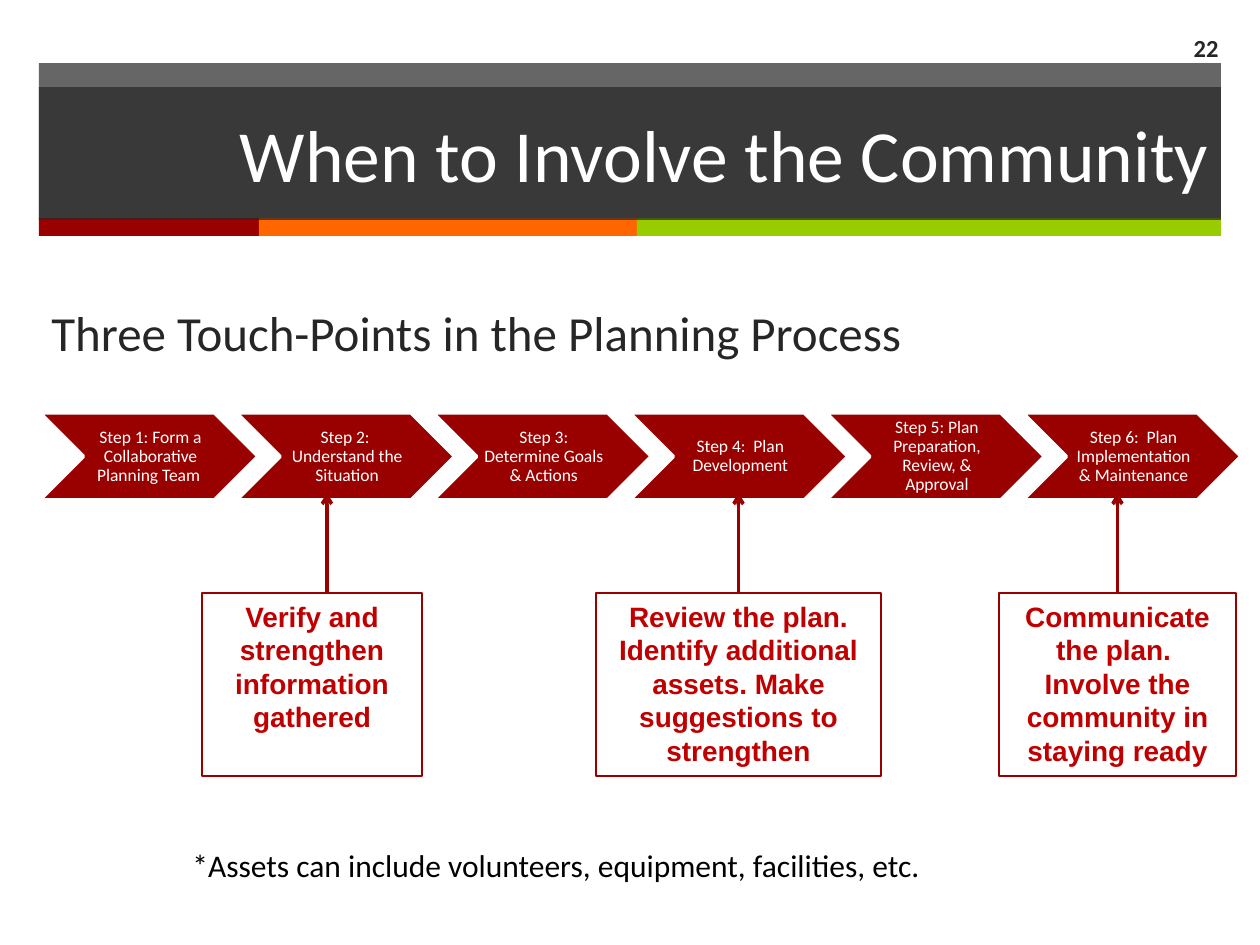
from lxml.etree import SubElement
from pptx import Presentation
from pptx.dml.color import RGBColor
from pptx.enum.shapes import MSO_CONNECTOR, MSO_SHAPE
from pptx.enum.text import MSO_ANCHOR, PP_ALIGN
from pptx.oxml.ns import qn
from pptx.util import Emu, Pt

PX_PER_INCH = 126
WHITE = RGBColor(0xFF, 0xFF, 0xFF)
BLACK = RGBColor(0, 0, 0)
CHARCOAL = RGBColor(0x26, 0x26, 0x26)
DARK_RED = RGBColor(0x99, 0x00, 0x00)
TEXT_RED = RGBColor(0xC0, 0x00, 0x00)
ORANGE = RGBColor(0xFF, 0x66, 0x00)
GREEN = RGBColor(0x99, 0xCC, 0x00)

TITLE = "When to Involve the Community"
SUBTITLE = "Three Touch-Points in the Planning Process"
FOOTNOTE = "*Assets can include volunteers, equipment, facilities, etc."
PAGE_NUMBER = "22"
STRIPES = [(220, DARK_RED), (378, ORANGE), (584, GREEN)]  # width, colour
STEPS = [
    "Step 1: Form a Collaborative Planning Team ",
    "Step 2:  Understand the Situation",
    "Step 3: Determine Goals & Actions",
    "Step 4:  Plan Development",
    "Step 5: Plan Preparation, Review, & Approval",
    "Step 6:  Plan Implementation & Maintenance",
]
# text, box left, box width, arrow x, whether the arrow starts at the box's centre
TOUCH_POINTS = [
    ("Verify and strengthen information gathered", 202, 220, 327, False),
    ("Review the plan. Identify additional assets. Make suggestions to strengthen",
     596, 285, 738, True),
    ("Communicate the plan.  Involve the community in staying ready",
     999, 237, 1118, True),
]

BAND_LEFT, BAND_WIDTH = 39, 1182
STEP_LEFT, STEP_TOP, STEP_WIDTH, STEP_HEIGHT = 40, 413, 218, 87
STEP_PITCH = 983 / 5
LABEL_INSET, LABEL_WIDTH = 43, 131
NOTE_TOP, NOTE_HEIGHT = 593, 183
ARROW_TIP = 493


def px(length):
    return Emu(round(length * 914400 / PX_PER_INCH))


def add_block(page, kind, area, fill=None, line=None, line_width=1, alpha=None):
    """Add a preset shape; alpha is the fill's opacity in percent."""
    block = page.shapes.add_shape(kind, *map(px, area))
    block.shadow.inherit = False
    if fill is None:
        block.fill.background()
    else:
        block.fill.solid()
        block.fill.fore_color.rgb = fill
    if alpha is not None:
        color = block.fill._xPr.find(qn("a:solidFill"))[0]
        SubElement(color, qn("a:alpha")).set("val", str(alpha * 1000))
    if line is None:
        block.line.fill.background()
    else:
        block.line.color.rgb = line
        block.line.width = Pt(line_width)
    return block


def write(box, text, size, color, align=PP_ALIGN.LEFT, anchor=MSO_ANCHOR.TOP,
          font="Calibri", bold=False):
    frame = box.text_frame
    frame.word_wrap = True
    frame.vertical_anchor = anchor
    paragraph = frame.paragraphs[0]
    paragraph.alignment = align
    span = paragraph.add_run()
    span.text = text
    span.font.name = font
    span.font.size = Pt(size)
    span.font.bold = bold
    span.font.color.rgb = color
    return frame


def add_text(page, area, *args, **kwargs):
    return write(page.shapes.add_textbox(*map(px, area)), *args, **kwargs)


def add_header(page):
    add_block(page, MSO_SHAPE.RECTANGLE, (BAND_LEFT, 63, BAND_WIDTH, 156),
              CHARCOAL, alpha=70)
    left = BAND_LEFT
    for width, color in STRIPES:
        add_block(page, MSO_SHAPE.RECTANGLE, (left, 218, width, 18), color)
        left += width
    title = add_block(page, MSO_SHAPE.RECTANGLE, (BAND_LEFT, 87, BAND_WIDTH, 133),
                      CHARCOAL, alpha=70)
    write(title, TITLE, 42, WHITE, PP_ALIGN.RIGHT, MSO_ANCHOR.MIDDLE)
    add_text(page, (1144, 23, 87, 49), PAGE_NUMBER, 14, CHARCOAL,
             PP_ALIGN.RIGHT, MSO_ANCHOR.MIDDLE, bold=True)


def add_step(page, index, text):
    left = STEP_LEFT + index * STEP_PITCH
    add_block(page, MSO_SHAPE.CHEVRON, (left, STEP_TOP, STEP_WIDTH, STEP_HEIGHT),
              DARK_RED, WHITE, 2)
    frame = add_text(page, (left + LABEL_INSET, STEP_TOP, LABEL_WIDTH, STEP_HEIGHT),
                     text, 10, WHITE, PP_ALIGN.CENTER, MSO_ANCHOR.MIDDLE)
    frame.margin_left = px(5)
    frame.margin_right = frame.margin_top = frame.margin_bottom = px(1)
    frame.paragraphs[0].line_spacing = 0.9


def add_touch_point(page, text, left, width, arrow_x, centred):
    arrow = page.shapes.add_connector(
        MSO_CONNECTOR.STRAIGHT, px(arrow_x), px(NOTE_TOP), px(arrow_x), px(ARROW_TIP))
    arrow.line.color.rgb = DARK_RED
    arrow.line.width = Pt(2)
    SubElement(arrow.line._get_or_add_ln(), qn("a:tailEnd")).set("type", "arrow")
    SubElement(arrow._element.spPr, qn("a:effectLst"))
    note = add_block(page, MSO_SHAPE.RECTANGLE, (left, NOTE_TOP, width, NOTE_HEIGHT),
                     line=DARK_RED, line_width=0.75)
    write(note, text, 16, TEXT_RED, PP_ALIGN.CENTER, font="Arial", bold=True)
    if centred:
        arrow.begin_connect(note, 0)
        arrow.end_x = arrow.begin_x


def main():
    deck = Presentation()
    deck.slide_width, deck.slide_height = px(1260), px(945)
    page = deck.slides.add_slide(deck.slide_layouts[6])
    add_header(page)
    add_text(page, (BAND_LEFT, 296, 1079, 76), SUBTITLE, 28, CHARCOAL)
    for index, text in enumerate(STEPS):
        add_step(page, index, text)
    for touch_point in TOUCH_POINTS:
        add_touch_point(page, *touch_point)
    add_text(page, (180, 840, 995, 50), FOOTNOTE, 18, BLACK)
    deck.save("out.pptx")


if __name__ == "__main__":
    main()
